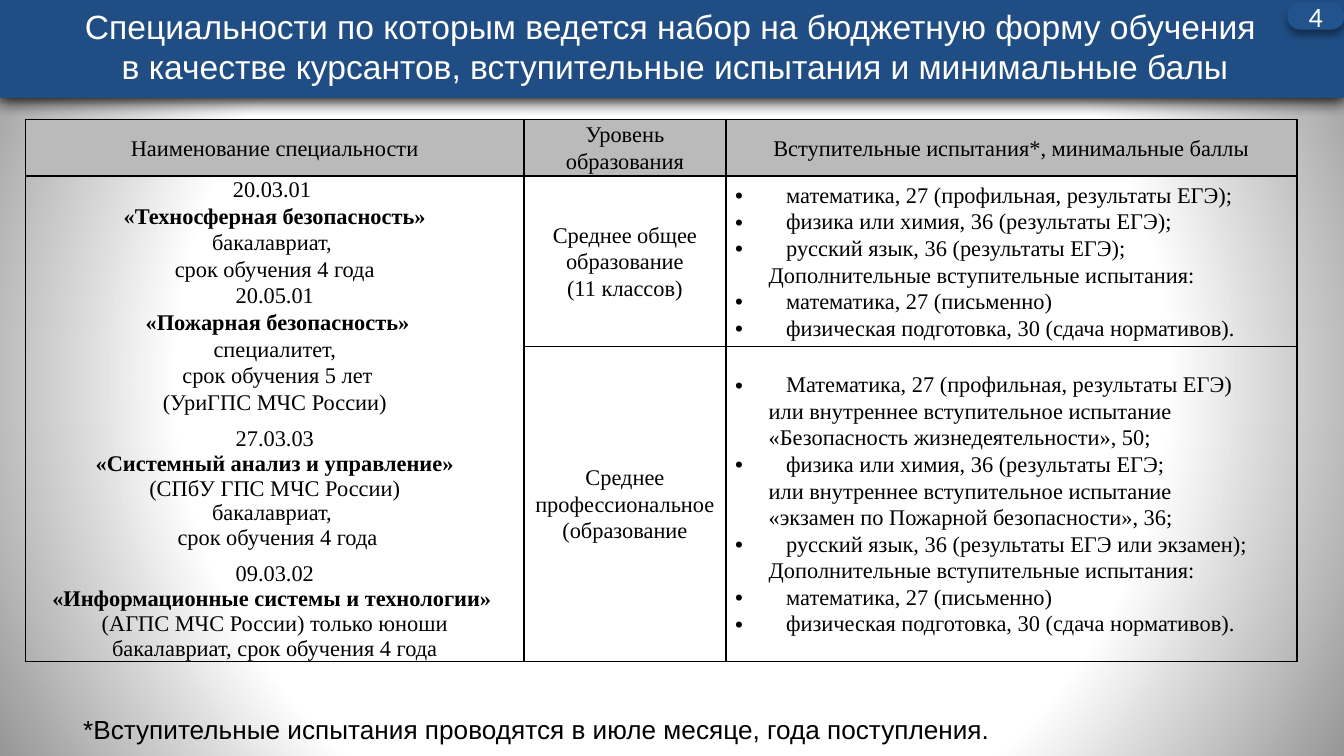
"""Builds a slide with a table of specialities, entrance exams and minimum scores."""
from copy import deepcopy
from dataclasses import dataclass
from functools import partial

from pptx import Presentation
from pptx.dml.color import RGBColor as Rgb
from pptx.enum.shapes import MSO_SHAPE as Form
from pptx.enum.text import MSO_ANCHOR as Anchor, PP_ALIGN as Align
from pptx.oxml import parse_xml
from pptx.oxml.ns import nsdecls, qn
from pptx.util import Inches, Pt

COLS = 1000
UNIT = Inches(0.01)
NS = nsdecls("a", "p")


@dataclass(frozen=True)
class Theme:
    head: str = "204D84"
    badge: str = "23538D"
    white: str = "FFFFFF"
    black: str = "000000"
    grey: str = "BABABA"
    edge: str = "979797"
    sans: str = "Arial"
    serif: str = "Times New Roman"
    label: str = "Calibri"
    title: int = 18
    page: int = 15
    note: int = 14
    body: int = 12


@dataclass(frozen=True)
class Line:
    text: str
    bold: bool = False
    bullet: bool = False
    left: int = 0
    gap: int = 0
    lead: float = 1.07


@dataclass(frozen=True)
class Box:
    left: int
    top: int
    width: int
    height: int

    def place(self) -> list:
        return [n * UNIT for n in (self.left, self.top, self.width, self.height)]


@dataclass(frozen=True)
class Shade:
    alpha: int
    blur: float
    dist: int


@dataclass(frozen=True)
class Panel:
    box: Box
    form: Form
    fill: str
    shade: Shade


THEME = Theme()
Bold = partial(Line, bold=True)
Item = partial(Line, bullet=True, left=38)
More = partial(Line, left=25)
Tight = partial(Line, lead=1.0)

BANNER = Panel(Box(-2, -4, COLS + 2, 77), Form.RECTANGLE, THEME.head, Shade(100, 8.5, 1))
BADGE = Panel(Box(958, 2, 42, 20), Form.ROUNDED_RECTANGLE, THEME.badge, Shade(40, 4, 3))
NOTE = Box(52, 519, 918, 47)
WIDTHS, HEIGHTS = (371, 150, 425), (42, 127, 233)
GRID = Box(19, 89, sum(WIDTHS), sum(HEIGHTS))

TITLE = [
    Tight("Специальности по которым ведется набор на бюджетную форму обучения"),
    Tight(" в качестве курсантов, вступительные испытания и минимальные балы"),
]
HEADS = ("Наименование специальности", "Уровень образования",
         "Вступительные испытания*, минимальные баллы")
COURSES = [
    Line("20.03.01 "),
    Bold("«Техносферная безопасность»"),
    Line("бакалавриат, "),
    Line("срок обучения 4 года"),
    Line("20.05.01"),
    Bold(" «Пожарная безопасность»"),
    Line("специалитет,"),
    Line(" срок обучения 5 лет"),
    Line("(УриГПС МЧС России)"),
    Tight("27.03.03", gap=6),
    Tight("«Системный анализ и управление»", bold=True),
    Tight("(СПбУ ГПС МЧС России)"),
    Tight("бакалавриат, "),
    Tight(" срок обучения 4 года"),
    Tight("09.03.02", gap=6),
    Tight("«Информационные системы и технологии» ", bold=True),
    Tight("(АГПС МЧС России) только юноши"),
    Tight("бакалавриат, срок обучения 4 года"),
]
EXTRA = [
    More("Дополнительные вступительные испытания:"),
    Item("математика, 27 (письменно)"),
    Item("физическая подготовка, 30 (сдача нормативов)."),
]
SCHOOL = [
    Item("математика, 27 (профильная, результаты ЕГЭ);"),
    Item("физика или химия, 36 (результаты ЕГЭ);"),
    Item("русский язык, 36 (результаты ЕГЭ);"),
    *EXTRA,
]
INNER = More("или внутреннее вступительное испытание")
COLLEGE = [
    Item("Математика, 27 (профильная, результаты ЕГЭ)"),
    INNER,
    More("«Безопасность жизнедеятельности», 50;"),
    Item("физика или химия, 36 (результаты ЕГЭ;"),
    INNER,
    More("«экзамен по Пожарной безопасности», 36;"),
    Item("русский язык, 36 (результаты ЕГЭ или экзамен);"),
    *EXTRA,
]
LEVELS = ("Среднее общее образование\v(11 классов)", "Среднее профессиональное (образование")


def write(frame, lines: list, *, size: int, font: str = THEME.serif,
          color: str = THEME.black, align: Align = Align.CENTER, wrap: bool = True) -> None:
    frame.word_wrap = wrap
    for num, line in enumerate(lines):
        para = frame.add_paragraph() if num else frame.paragraphs[0]
        para.text = line.text
        para.alignment, para.line_spacing = align, line.lead
        if line.gap:
            para.space_before = Pt(line.gap)
        props = para._p.get_or_add_pPr()
        if line.left:
            props.set("marL", str(line.left * UNIT))
        if line.bullet:
            props.set("indent", str(-line.left * UNIT))
            props.append(parse_xml(f'<a:buFont {NS} typeface="Arial"/>'))
            props.append(parse_xml(f'<a:buChar {NS} char="•"/>'))
        for run in para.runs:
            run.font.size, run.font.name, run.font.bold = Pt(size), font, line.bold
            run.font.color.rgb = Rgb.from_string(color)
        for split in para._p.findall(qn("a:br")):
            split.append(deepcopy(para.runs[0]._r.rPr))


def paint(slide) -> None:
    slide._element.cSld.insert(0, parse_xml(
        f'<p:bg {NS}><p:bgPr><a:gradFill rotWithShape="1"><a:gsLst>'
        f'<a:gs pos="64000"><a:srgbClr val="{THEME.white}"/></a:gs>'
        f'<a:gs pos="100000"><a:srgbClr val="{THEME.edge}"><a:alpha val="61000"/></a:srgbClr></a:gs>'
        '</a:gsLst><a:path path="circle">'
        '<a:fillToRect l="50000" t="50000" r="50000" b="50000"/></a:path>'
        '</a:gradFill><a:effectLst/></p:bgPr></p:bg>'))


def panel(slide, item: Panel):
    shape = slide.shapes.add_shape(item.form, *item.box.place())
    shape.fill.solid()
    shape.fill.fore_color.rgb = Rgb.from_string(item.fill)
    shape.line.fill.background()
    shade = item.shade
    shape._element.spPr.append(parse_xml(
        f'<a:effectLst {NS}><a:outerShdw blurRad="{Pt(shade.blur)}" dist="{Pt(shade.dist)}" '
        f'dir="5400000" algn="t" rotWithShape="0"><a:srgbClr val="{THEME.black}">'
        f'<a:alpha val="{shade.alpha * 1000}"/></a:srgbClr></a:outerShdw></a:effectLst>'))
    shape.text_frame.vertical_anchor = Anchor.MIDDLE
    return shape


def style(cell, fill: str = "") -> None:
    cell.vertical_anchor = Anchor.MIDDLE
    cell.margin_left = cell.margin_right = 7 * UNIT
    cell.margin_top = cell.margin_bottom = 0
    props = cell._tc.get_or_add_tcPr()
    for side in ("lnL", "lnR", "lnT", "lnB"):
        props.append(parse_xml(
            f'<a:{side} {NS} w="{Pt(1)}"><a:solidFill><a:srgbClr val="{THEME.black}"/>'
            f'</a:solidFill></a:{side}>'))
    if fill:
        cell.fill.solid()
        cell.fill.fore_color.rgb = Rgb.from_string(fill)
    else:
        cell.fill.background()


def tabulate(slide) -> None:
    table = slide.shapes.add_table(len(HEIGHTS), len(WIDTHS), *GRID.place()).table
    table.first_row = table.horz_banding = False
    for col, width in zip(table.columns, WIDTHS):
        col.width = width * UNIT
    for num, (row, height) in enumerate(zip(table.rows, HEIGHTS)):
        row.height = height * UNIT
        for cell in row.cells:
            style(cell, "" if num else THEME.grey)
    table.cell(1, 0).merge(table.cell(2, 0))
    put = partial(write, size=THEME.body)
    for num, head in enumerate(HEADS):
        put(table.cell(0, num).text_frame, [Line(head)])
    put(table.cell(1, 0).text_frame, COURSES)
    for num, (level, exams) in enumerate(zip(LEVELS, (SCHOOL, COLLEGE)), 1):
        put(table.cell(num, 1).text_frame, [Line(level)])
        put(table.cell(num, 2).text_frame, exams, align=Align.LEFT)


def main() -> None:
    deck = Presentation()
    deck.slide_width = COLS * UNIT
    deck.slide_height = deck.slide_width * 9 // 16
    slide = deck.slides.add_slide(deck.slide_layouts[6])
    paint(slide)
    write(panel(slide, BANNER).text_frame, TITLE, size=THEME.title,
          font=THEME.sans, color=THEME.white)
    badge = panel(slide, BADGE)
    badge.adjustments[0] = 0.46
    write(badge.text_frame, [Tight("4")], size=THEME.page, font=THEME.label,
          color=THEME.white, wrap=False)
    tabulate(slide)
    note = slide.shapes.add_textbox(*NOTE.place()).text_frame
    note.vertical_anchor = Anchor.MIDDLE
    write(note, [Tight("*Вступительные испытания проводятся в июле месяце, года поступления.")],
          size=THEME.note, font=THEME.sans, align=Align.LEFT)
    deck.save("out.pptx")


if __name__ == "__main__":
    main()
